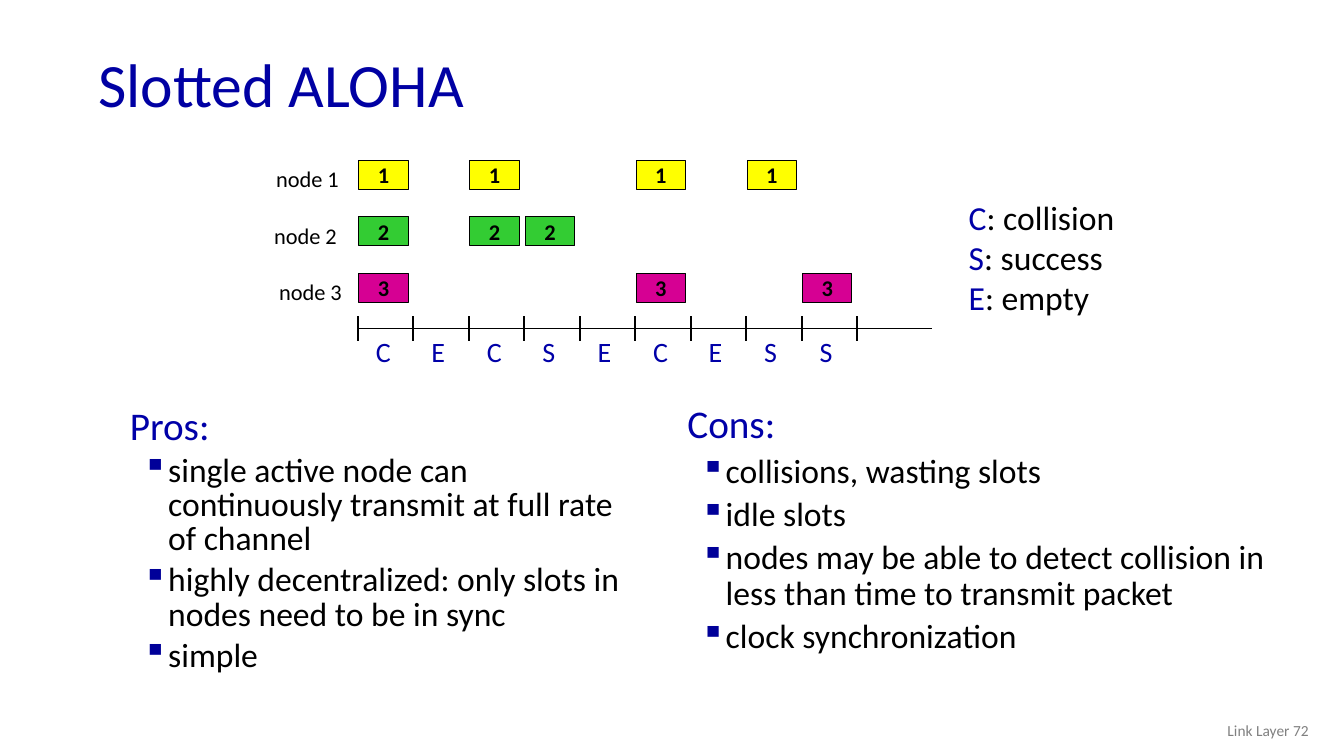
"""Build the Slotted ALOHA slide with its slot timeline, pros and cons."""
from dataclasses import dataclass

from lxml.etree import SubElement
from pptx import Presentation
from pptx.dml.color import RGBColor
from pptx.enum.shapes import MSO_CONNECTOR as Connector, MSO_SHAPE as Preset
from pptx.enum.text import MSO_ANCHOR as Anchor, PP_ALIGN as Align
from pptx.oxml.ns import qn
from pptx.slide import Slide
from pptx.util import Inches, Pt


@dataclass(frozen=True)
class Theme:
    font: str = "Calibri"
    title_blue: str = "0000A3"
    blue: str = "0000A8"
    bullet: str = "000099"
    black: str = "000000"
    grey: str = "808080"
    title_size: int = 44
    heading_size: int = 28
    body_size: int = 24
    outcome_size: int = 20
    node_size: int = 16
    footer_size: int = 11


THEME = Theme()


@dataclass(frozen=True)
class Run:
    text: str
    size: int
    color: str
    bold: bool = False


@dataclass(frozen=True)
class Line:
    runs: tuple[Run, ...]
    spacing: float = 1.0
    align: Align = Align.LEFT
    space_before: float = 0
    indent: float = 0
    bullet: str = ""


@dataclass(frozen=True)
class TextBox:
    left: float
    top: float
    width: float
    height: float
    lines: tuple[Line, ...]
    wrap: bool = True
    anchor: Anchor = Anchor.TOP


@dataclass(frozen=True)
class Node:
    number: int
    label_left: float
    color: str
    slots: tuple[int, ...]


@dataclass(frozen=True)
class Column:
    left: float
    top: float
    width: float
    height: float
    spacing: float
    heading: str
    points: tuple[str, ...]


NODES = (
    Node(1, 2.64, "FFFF00", (0, 2, 5, 7)),
    Node(2, 2.62, "33CC33", (0, 2, 3)),
    Node(3, 2.67, "D60093", (0, 5, 8)),
)
OUTCOMES = "CECSECESS"
LEGEND = {"C": ": collision", "S": ": success", "E": ": empty"}
COLUMNS = (
    Column(1.19, 4, 5.3, 3.5, 0.85, "Pros:", (
        "single active node can continuously transmit at full rate of channel",
        "highly decentralized: only slots in nodes need to be in sync",
        "simple",
    )),
    Column(6.72, 3.97, 6.1, 3, 0.9, "Cons:", (
        "collisions, wasting slots",
        "idle slots",
        "nodes may be able to detect collision in less than time to transmit packet",
        "clock synchronization",
    )),
)
AXIS_LEFT, AXIS_RIGHT, AXIS_TOP, SLOT_WIDTH = 3.55, 9.24, 3.26, 0.55
ROW_TOP, ROW_PITCH = 1.59, 0.56


def apply_format(target: object, values: dict[str, object]) -> None:
    """Set every named attribute on the target."""
    for name, value in values.items():
        setattr(target, name, value)


def fill_text(frame: object, lines: tuple[Line, ...]) -> None:
    """Write the lines into a text frame."""
    for index, line in enumerate(lines):
        paragraph = frame.add_paragraph() if index else frame.paragraphs[0]
        apply_format(paragraph, {"alignment": line.align, "line_spacing": line.spacing,
                                 "space_before": Pt(line.space_before)})
        if line.bullet:
            properties = paragraph._p.get_or_add_pPr()
            properties.set("marL", str(Inches(line.indent)))
            properties.set("indent", str(Inches(-0.25)))
            color = SubElement(properties, qn("a:buClr"))
            SubElement(color, qn("a:srgbClr"), val=THEME.bullet)
            SubElement(properties, qn("a:buChar"), char=line.bullet)
        for item in line.runs:
            run = paragraph.add_run()
            run.text = item.text
            apply_format(run.font, {"name": THEME.font, "size": Pt(item.size), "bold": item.bold})
            run.font.color.rgb = RGBColor.from_string(item.color)


def draw_text(slide: Slide, box: TextBox) -> None:
    """Draw a text box."""
    shape = slide.shapes.add_textbox(Inches(box.left), Inches(box.top),
                                     Inches(box.width), Inches(box.height))
    apply_format(shape.text_frame, {"word_wrap": box.wrap, "vertical_anchor": box.anchor})
    fill_text(shape.text_frame, box.lines)


def draw_line(slide: Slide, start: tuple[float, float], end: tuple[float, float],
              weight: float) -> None:
    """Draw a black line without a shadow."""
    points = [Inches(value) for value in (*start, *end)]
    connector = slide.shapes.add_connector(Connector.STRAIGHT, *points)
    connector.line.color.rgb = RGBColor.from_string(THEME.black)
    connector.line.width = Pt(weight)
    SubElement(connector._element.spPr, qn("a:effectLst"))


def draw_packet(slide: Slide, node: Node, left: float, top: float) -> None:
    """Draw one numbered packet."""
    shape = slide.shapes.add_shape(Preset.RECTANGLE, Inches(left), Inches(top),
                                   Inches(0.49), Inches(0.29))
    shape.shadow.inherit = False
    shape.fill.solid()
    shape.fill.fore_color.rgb = RGBColor.from_string(node.color)
    shape.line.color.rgb = RGBColor.from_string(THEME.black)
    shape.line.width = Pt(0.75)
    apply_format(shape.text_frame, {"margin_top": 0, "margin_bottom": 0, "word_wrap": False,
                                    "vertical_anchor": Anchor.MIDDLE})
    number = Run(str(node.number), THEME.node_size, THEME.black, True)
    fill_text(shape.text_frame, (Line((number,), align=Align.CENTER),))


def draw_timeline(slide: Slide) -> None:
    """Draw node rows, the slot axis and the slot outcomes."""
    for row, node in enumerate(NODES):
        top = ROW_TOP + row * ROW_PITCH
        label = Run(f"node {node.number}", THEME.node_size, THEME.black)
        draw_text(slide, TextBox(node.label_left, top, 0.83, 0.37, (Line((label,)),), False))
        for slot in node.slots:
            draw_packet(slide, node, AXIS_LEFT + 0.01 + slot * SLOT_WIDTH, top)
    draw_line(slide, (AXIS_LEFT, AXIS_TOP), (AXIS_RIGHT, AXIS_TOP), 0.75)
    for slot in range(len(OUTCOMES) + 1):
        left = AXIS_LEFT + slot * SLOT_WIDTH
        draw_line(slide, (left, AXIS_TOP - 0.12), (left, AXIS_TOP + 0.12), 1.5)
    for slot, outcome in enumerate(OUTCOMES):
        letter = Line((Run(outcome, THEME.outcome_size, THEME.blue),))
        left = AXIS_LEFT + 0.08 + slot * SLOT_WIDTH
        draw_text(slide, TextBox(left, 3.27, 0.35, 0.44, (letter,), False))


def draw_column(slide: Slide, column: Column) -> None:
    """Draw a heading with its bulleted points."""
    heading = Line((Run(column.heading, THEME.heading_size, THEME.blue),), column.spacing)
    points = tuple(
        Line((Run(point, THEME.body_size, THEME.black),), column.spacing,
             space_before=4.8, indent=0.38, bullet="▪")
        for point in column.points)
    draw_text(slide, TextBox(column.left, column.top, column.width, column.height,
                             (heading, *points)))


def main() -> None:
    """Build and save the presentation."""
    presentation = Presentation()
    apply_format(presentation, {"slide_width": Inches(13.33), "slide_height": Inches(7.5)})
    slide = presentation.slides.add_slide(presentation.slide_layouts[6])
    title = Line((Run("Slotted ALOHA", THEME.title_size, THEME.title_blue),), 0.9)
    draw_text(slide, TextBox(0.88, 0.38, 11.5, 0.98, (title,), anchor=Anchor.MIDDLE))
    for column in COLUMNS:
        draw_column(slide, column)
    draw_timeline(slide)
    legend = tuple(Line((Run(letter, THEME.body_size, THEME.blue),
                         Run(meaning, THEME.body_size, THEME.black)))
                   for letter, meaning in LEGEND.items())
    draw_text(slide, TextBox(9.51, 1.9, 1.66, 1.31, legend, False))
    footer = Line((Run("Link Layer 72", THEME.footer_size, THEME.grey),), align=Align.RIGHT)
    draw_text(slide, TextBox(10.08, 7.05, 3, 0.4, (footer,), anchor=Anchor.MIDDLE))
    presentation.save("out.pptx")


if __name__ == "__main__":
    main()
